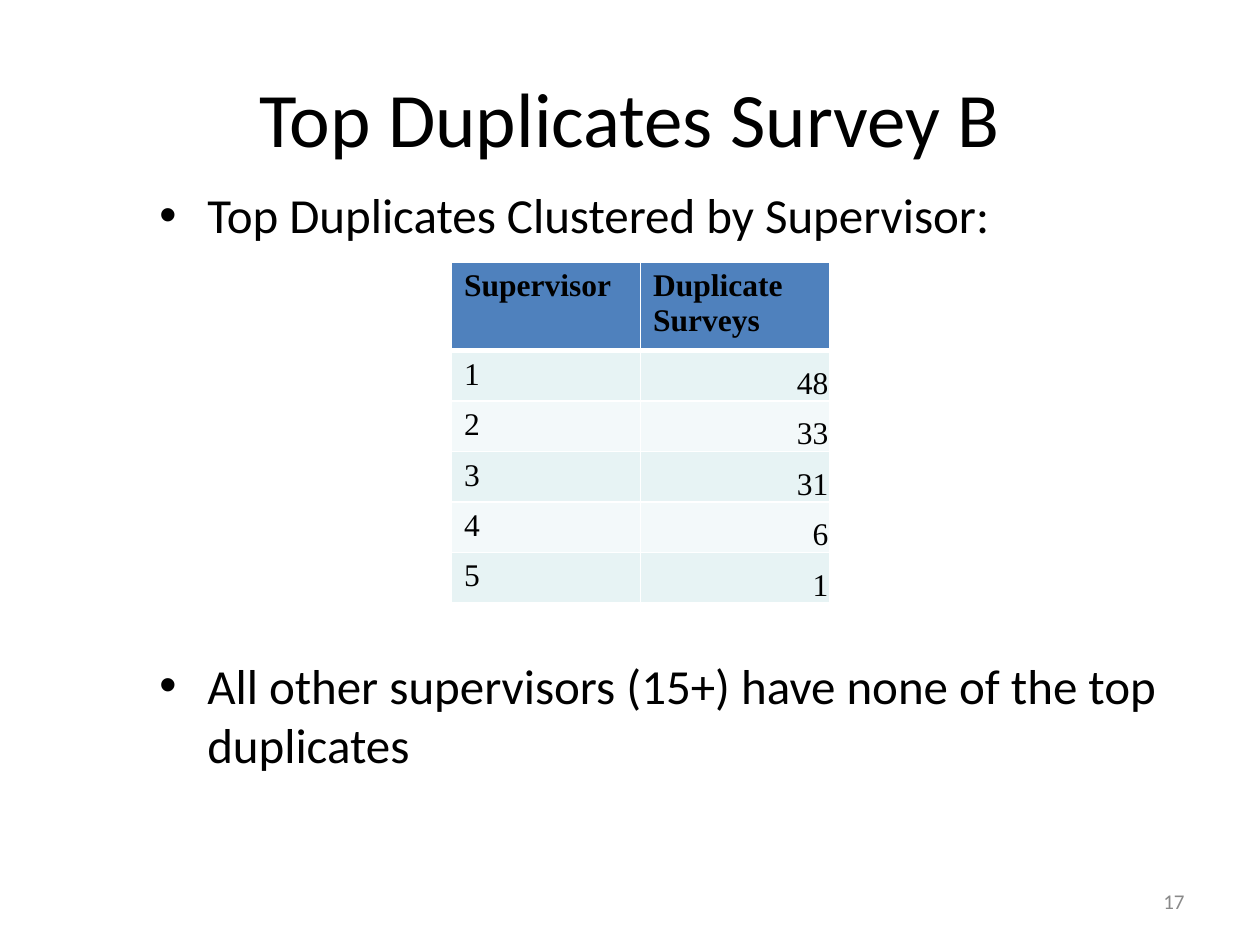
from dataclasses import dataclass

from lxml.etree import SubElement
from pptx import Presentation
from pptx.dml.color import RGBColor
from pptx.enum.text import MSO_ANCHOR, PP_ALIGN
from pptx.oxml.ns import qn
from pptx.util import Inches, Pt


@dataclass(frozen=True)
class Theme:
    """Colours, fonts and type sizes of the deck."""
    sans: str = "Calibri"
    serif: str = "Times New Roman"
    ink: str = "000000"
    muted: str = "898989"
    border: str = "FFFFFF"
    header: str = "4F81BD"
    bands: tuple = ("E7F3F4", "F3F9FA")
    title: int = 44
    body: int = 28
    table: int = 18
    small: int = 12


class SlideBuilder:
    """Places elements on a slide with a grid of 120 columns and 90 rows."""

    def __init__(self, prs, theme):
        """Add a blank slide to the presentation."""
        self.theme = theme
        self.s = prs.slides.add_slide(prs.slide_layouts[6])
        self.col = prs.slide_width / 120
        self.row = prs.slide_height / 90

    def place(self, x, y, w, h):
        """Turn grid units into lengths."""
        return (round(x * self.col), round(y * self.row),
                round(w * self.col), round(h * self.row))

    def add_text(self, p, text, size, font, color, bold=False):
        """Add one styled run to a paragraph."""
        r = p.add_run()
        r.text = text
        r.font.size = Pt(size)
        r.font.name = font
        r.font.bold = bold
        r.font.color.rgb = RGBColor.from_string(color)

    def frame(self, area, anchor):
        """Add an empty wrapping text box and return its text frame."""
        tf = self.s.shapes.add_textbox(*self.place(*area)).text_frame
        tf.word_wrap = True
        tf.vertical_anchor = anchor
        return tf

    def line(self, area, text, size, color, align):
        """Add a single line of text centred vertically."""
        p = self.frame(area, MSO_ANCHOR.MIDDLE).paragraphs[0]
        p.alignment = align
        self.add_text(p, text, size, self.theme.sans, color)

    def bullets(self, area, items, gap):
        """Add bulleted paragraphs with a gap in points between them."""
        tf = self.frame(area, MSO_ANCHOR.TOP)
        for i, text in enumerate(items):
            p = tf.add_paragraph() if i else tf.paragraphs[0]
            p.space_before = Pt(gap if i else 5.6)
            pPr = p._p.get_or_add_pPr()
            pPr.set("marL", str(Inches(0.38)))
            pPr.set("indent", str(-Inches(0.38)))
            SubElement(pPr, qn("a:buFont"), typeface="Arial")
            SubElement(pPr, qn("a:buChar"), char="•")
            self.add_text(p, text, self.theme.body, self.theme.sans,
                          self.theme.ink)

    def borders(self, cell, top, bottom):
        """Draw the four borders of a cell, widths in points."""
        tcPr = cell._tc.get_or_add_tcPr()
        for side, width in zip("LRTB", (1, 1, top, bottom)):
            ln = SubElement(tcPr, qn(f"a:ln{side}"), w=str(Pt(width)))
            fill = SubElement(ln, qn("a:solidFill"))
            SubElement(fill, qn("a:srgbClr"), val=self.theme.border)

    def cell(self, cell, lines, fill, bold):
        """Fill a cell and add one paragraph for each line."""
        cell.fill.solid()
        cell.fill.fore_color.rgb = RGBColor.from_string(fill)
        tf = cell.text_frame
        for i, text in enumerate(lines.split("\n")):
            p = tf.add_paragraph() if i else tf.paragraphs[0]
            self.add_text(p, text, self.theme.table, self.theme.serif,
                          self.theme.ink, bold)

    def table(self, area, rows, header_height):
        """Add a banded table whose last column holds numbers."""
        table = self.s.shapes.add_table(
            len(rows), len(rows[0]), *self.place(*area)).table
        body_height = (area[3] - header_height) / (len(rows) - 1)
        for i, values in enumerate(rows):
            height = body_height if i else header_height
            table.rows[i].height = round(height * self.row)
            fill = self.theme.bands[(i - 1) % 2] if i else self.theme.header
            for j, text in enumerate(values):
                cell = table.cell(i, j)
                self.borders(cell, 3 if i == 1 else 1, 1 if i else 3)
                self.cell(cell, text, fill, bold=i == 0)
                if i and j == len(values) - 1:
                    self.number(cell)

    def number(self, cell):
        """Set a cell's text to the bottom right with thin margins."""
        cell.vertical_anchor = MSO_ANCHOR.BOTTOM
        cell.margin_left = cell.margin_right = cell.margin_top = Inches(0.01)
        cell.margin_bottom = 0
        cell.text_frame.paragraphs[0].alignment = PP_ALIGN.RIGHT


def main():
    """Build the slide and save it."""
    prs = Presentation()
    prs.slide_width, prs.slide_height = Inches(10), Inches(7.5)
    theme = Theme()
    slide = SlideBuilder(prs, theme)
    slide.line((6, 3.6, 108, 15), "Top Duplicates Survey B",
               theme.title, theme.ink, PP_ALIGN.CENTER)
    slide.bullets((14, 17, 100, 59.4), (
        "Top Duplicates Clustered by Supervisor:",
        "All other supervisors (15+) have none of the top duplicates",
    ), gap=235.5)
    slide.line((86, 83.4, 28, 4.8), "17",
               theme.small, theme.muted, PP_ALIGN.RIGHT)
    duplicates = (48, 33, 31, 6, 1)
    rows = [("Supervisor", "Duplicate\nSurveys")]
    rows += [(str(i), str(n)) for i, n in enumerate(duplicates, 1)]
    slide.table((43, 25, 36, 30.4), rows, header_height=7.8)
    prs.save("out.pptx")


if __name__ == "__main__":
    main()
